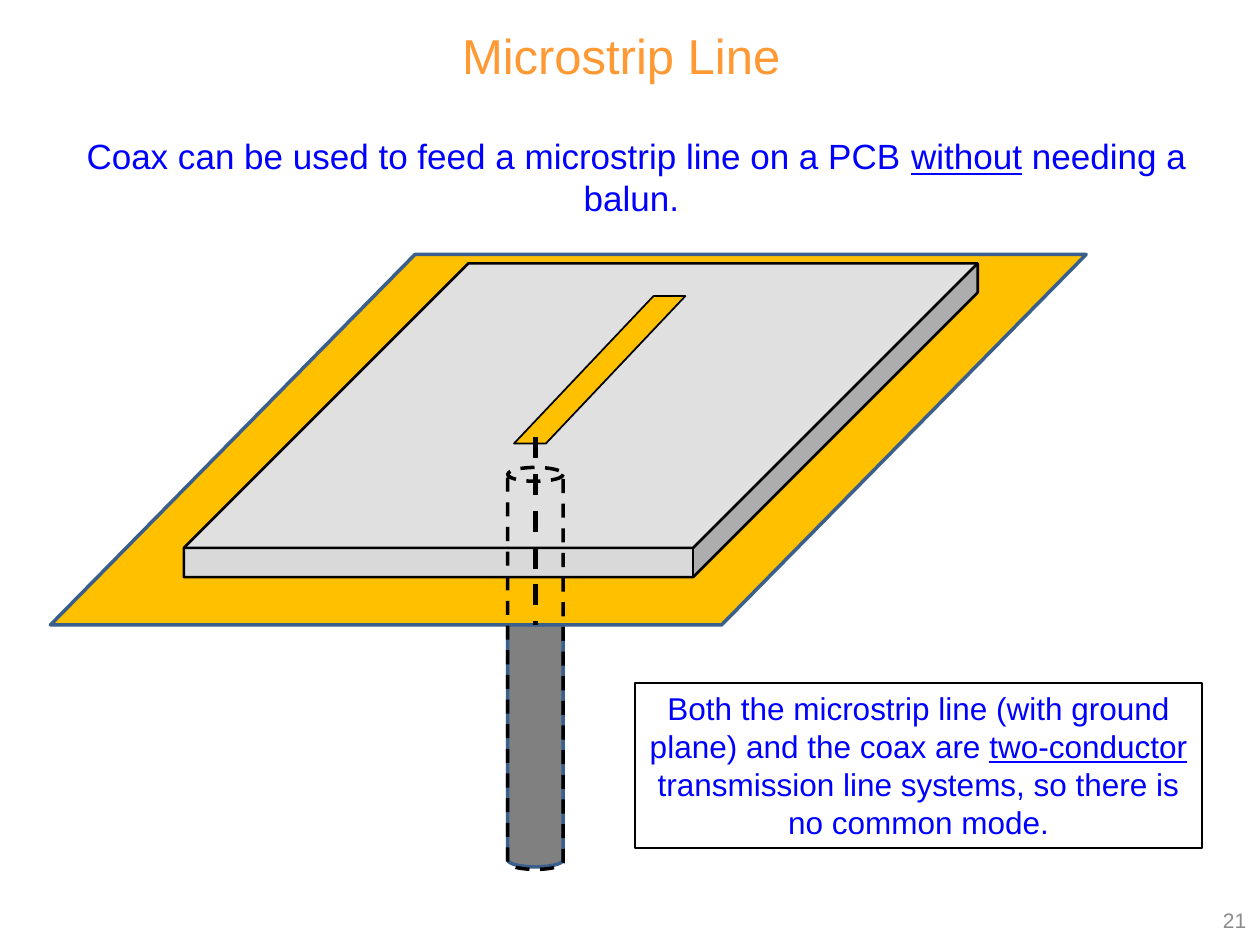
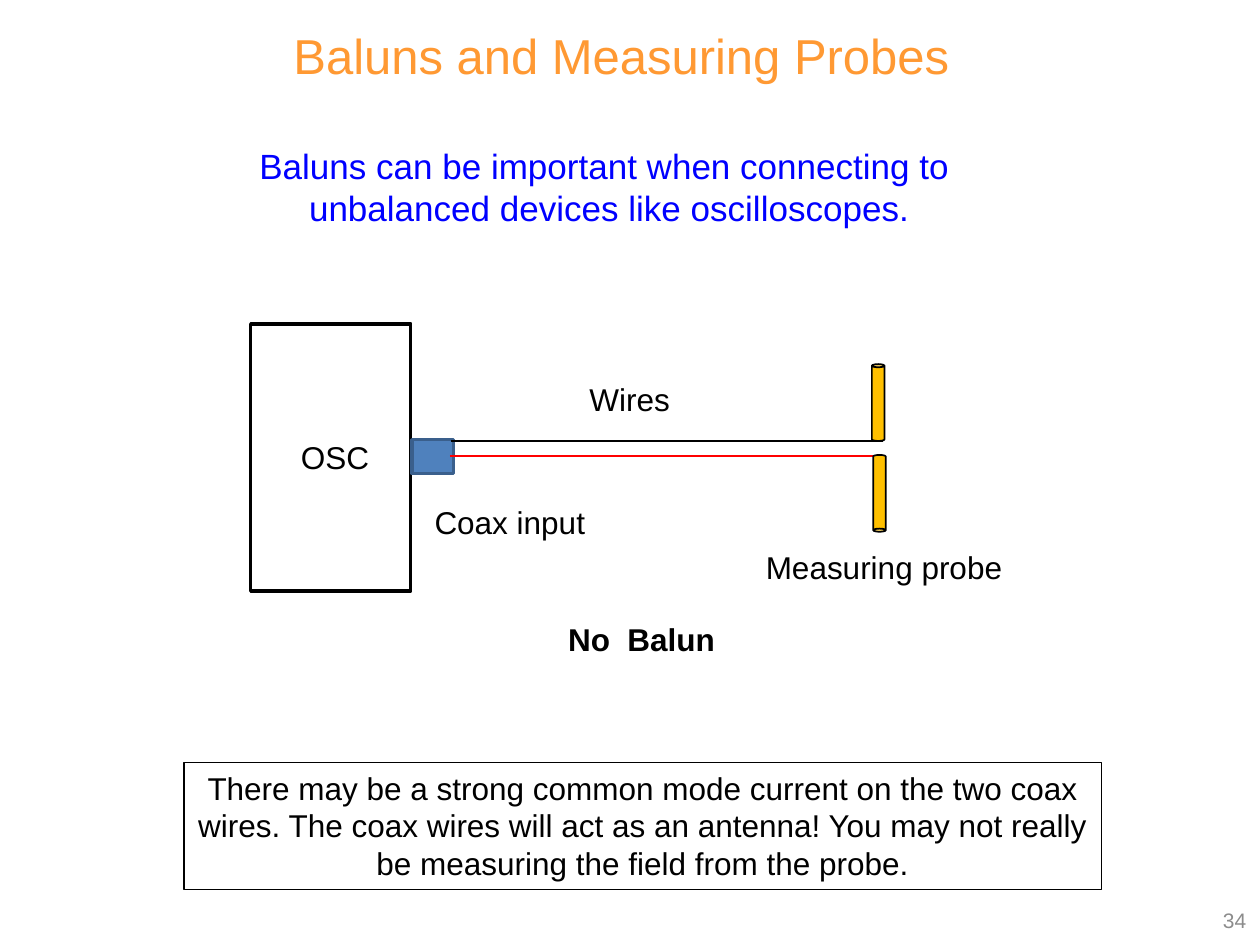
"""Build two slides on baluns: a coax-fed microstrip line and a measuring probe."""
from dataclasses import dataclass
from typing import Optional, Union

from lxml import etree
from pptx import Presentation
from pptx import util as u
from pptx.dml.color import RGBColor
from pptx.enum import dml, shapes, text
from pptx.oxml import ns

Kind = shapes.MSO_SHAPE
Align = text.PP_ALIGN
Anchor = text.MSO_ANCHOR
Box = tuple[float, float, float, float]


@dataclass(frozen=True)
class Theme:
    font: str = "Arial"
    orange: str = "FF9933"
    blue: str = "0000FF"
    black: str = "000000"
    red: str = "FF0000"
    gold: str = "FFC000"
    steel: str = "4F81BD"
    edge: str = "3A5F8C"
    gray: str = "808080"
    board: str = "D9D9D9"
    faint: str = "8C8C8C"
    title: int = 28
    lead: int = 20
    body: int = 18
    foot: int = 12


T = Theme()


@dataclass(frozen=True)
class Form:
    kind: Kind
    box: Box
    fill: Optional[str] = None
    line: str = T.black
    width: float = 2
    ratio: Optional[float] = None
    dash: bool = False
    turn: float = 0


@dataclass(frozen=True)
class Wire:
    start: tuple[float, float]
    end: tuple[float, float]
    color: str = T.black
    width: float = 1.5
    dash: bool = False


@dataclass(frozen=True)
class Label:
    words: str
    box: Box
    size: int = T.body
    color: str = T.black
    align: Align = Align.LEFT
    anchor: Anchor = Anchor.TOP
    bold: bool = False
    wrap: bool = False
    frame: bool = False


Item = Union[Form, Wire, Label]


def inches(nums: tuple) -> list:
    """Turn plain numbers into lengths."""
    return [u.Inches(n) for n in nums]


def write(frame, words: str, *, size: int, color: str, align: Align = Align.LEFT,
          anchor: Anchor = Anchor.TOP, bold: bool = False, wrap: bool = True) -> None:
    """Fill a text frame, underlining the words set between underscores."""
    frame.word_wrap = wrap
    frame.auto_size = text.MSO_AUTO_SIZE.NONE
    frame.vertical_anchor = anchor
    for row, line in enumerate(words.split("\n")):
        para = frame.add_paragraph() if row else frame.paragraphs[0]
        para.alignment = align
        for place, part in enumerate(line.split("_")):
            run = para.add_run()
            run.text = part
            font = run.font
            font.name, font.size, font.bold = T.font, u.Pt(size), bold
            font.underline = place % 2 == 1
            font.color.rgb = RGBColor.from_string(color)


def stroke(line, color: str, width: float, dash: bool = False) -> None:
    """Set the colour, width and dash of a line."""
    line.color.rgb = RGBColor.from_string(color)
    line.width = u.Pt(width)
    if dash:
        line.dash_style = dml.MSO_LINE.DASH


def add_form(slide, form: Form):
    """Draw a preset shape."""
    shape = slide.shapes.add_shape(form.kind, *inches(form.box))
    shape.shadow.inherit = False
    shape.rotation = form.turn
    if form.ratio is not None:
        shape.adjustments[0] = form.ratio
    if form.fill:
        shape.fill.solid()
        shape.fill.fore_color.rgb = RGBColor.from_string(form.fill)
    else:
        shape.fill.background()
    stroke(shape.line, form.line, form.width, form.dash)
    return shape


def add_wire(slide, wire: Wire) -> None:
    """Draw a straight line without a shadow."""
    link = slide.shapes.add_connector(
        shapes.MSO_CONNECTOR.STRAIGHT, *inches(wire.start + wire.end))
    stroke(link.line, wire.color, wire.width, wire.dash)
    etree.SubElement(link._element.spPr, ns.qn("a:effectLst"))


def add_label(slide, label: Label) -> None:
    """Place text, inside a thin frame if asked."""
    if label.frame:
        shape = add_form(slide, Form(Kind.RECTANGLE, label.box, width=0.75))
    else:
        shape = slide.shapes.add_textbox(*inches(label.box))
    write(shape.text_frame, label.words, size=label.size, color=label.color,
          align=label.align, anchor=label.anchor, bold=label.bold,
          wrap=label.wrap or label.frame)


DRAW = {Form: add_form, Wire: add_wire, Label: add_label}


def add_slide(deck, title: str, page: int, items: list[Item]) -> None:
    """Add a titled, numbered slide and draw its items from back to front."""
    slide = deck.slides.add_slide(deck.slide_layouts[5])
    head = slide.shapes.title
    head.left, head.top, head.width, head.height = inches((0.35, 0.15, 9.16, 0.57))
    write(head.text_frame, title, size=T.title, color=T.orange, align=Align.CENTER)
    number = Label(str(page), (7.66, 7.1, 2.33, 0.4), T.foot, T.faint,
                   Align.RIGHT, Anchor.MIDDLE, wrap=True)
    for item in [number, *items]:
        DRAW[type(item)](slide, item)


STRIP = [
    Label("Coax can be used to feed a microstrip line on a PCB _without_ needing a balun. ",
          (0.18, 1.02, 9.74, 0.44), T.lead, T.blue, Align.CENTER, wrap=True),
    Form(Kind.CAN, (4.03, 3.84, 0.44, 3.04), T.gray, T.edge),
    Form(Kind.PARALLELOGRAM, (0.4, 2.02, 8.22, 2.94), T.gold, T.edge, ratio=0.984),
    Form(Kind.CUBE, (1.46, 2.09, 6.3, 2.49), T.board, width=1.5, ratio=0.907),
    Form(Kind.PARALLELOGRAM, (4.08, 2.35, 1.36, 1.17), T.gold, width=1, ratio=0.946),
    Form(Kind.CAN, (4.03, 3.71, 0.44, 3.19), dash=True),
    Wire((4.25, 3.47), (4.25, 4.96), width=3, dash=True),
    Label("Both the microstrip line (with ground plane) and the coax are _two-conductor_"
          " transmission line systems, so there is no common mode.",
          (5.04, 5.42, 4.5, 1.31), color=T.blue, align=Align.CENTER, frame=True),
]

PROBE = [
    Label("Baluns can be important when connecting to \nunbalanced devices like oscilloscopes.",
          (1.94, 1.1, 5.79, 0.77), T.lead, T.blue, Align.CENTER),
    Form(Kind.RECTANGLE, (1.99, 2.57, 1.27, 2.12)),
    Form(Kind.RECTANGLE, (3.27, 3.49, 0.33, 0.27), T.steel, T.edge),
    Wire((3.57, 3.62), (7, 3.62), T.red),
    Wire((3.58, 3.5), (7.01, 3.5)),
    Form(Kind.CAN, (6.92, 2.89, 0.1, 0.61), T.gold, width=1),
    Form(Kind.CAN, (6.93, 3.61, 0.1, 0.61), T.gold, width=1, turn=180),
    Label("OSC", (2.29, 3.43, 0.75, 0.4)),
    Label("Coax input", (3.35, 3.94, 1.41, 0.4)),
    Label("Measuring probe", (5.98, 4.3, 2.1, 0.4)),
    Label("Wires", (4.58, 2.97, 0.85, 0.4)),
    Label("No  Balun", (4.41, 4.87, 1.38, 0.4), bold=True),
    Label("There may be a strong common mode current on the two coax wires. The coax wires"
          " will act as an antenna! You may not really be measuring the field from the probe.",
          (1.46, 6.05, 7.28, 1.01), align=Align.CENTER, frame=True),
]


def main() -> None:
    """Build and save the deck."""
    deck = Presentation()
    deck.slide_width, deck.slide_height = inches((10, 7.5))
    add_slide(deck, "Microstrip Line", 21, STRIP)
    add_slide(deck, "Baluns and Measuring Probes", 34, PROBE)
    deck.save("out.pptx")


if __name__ == "__main__":
    main()
